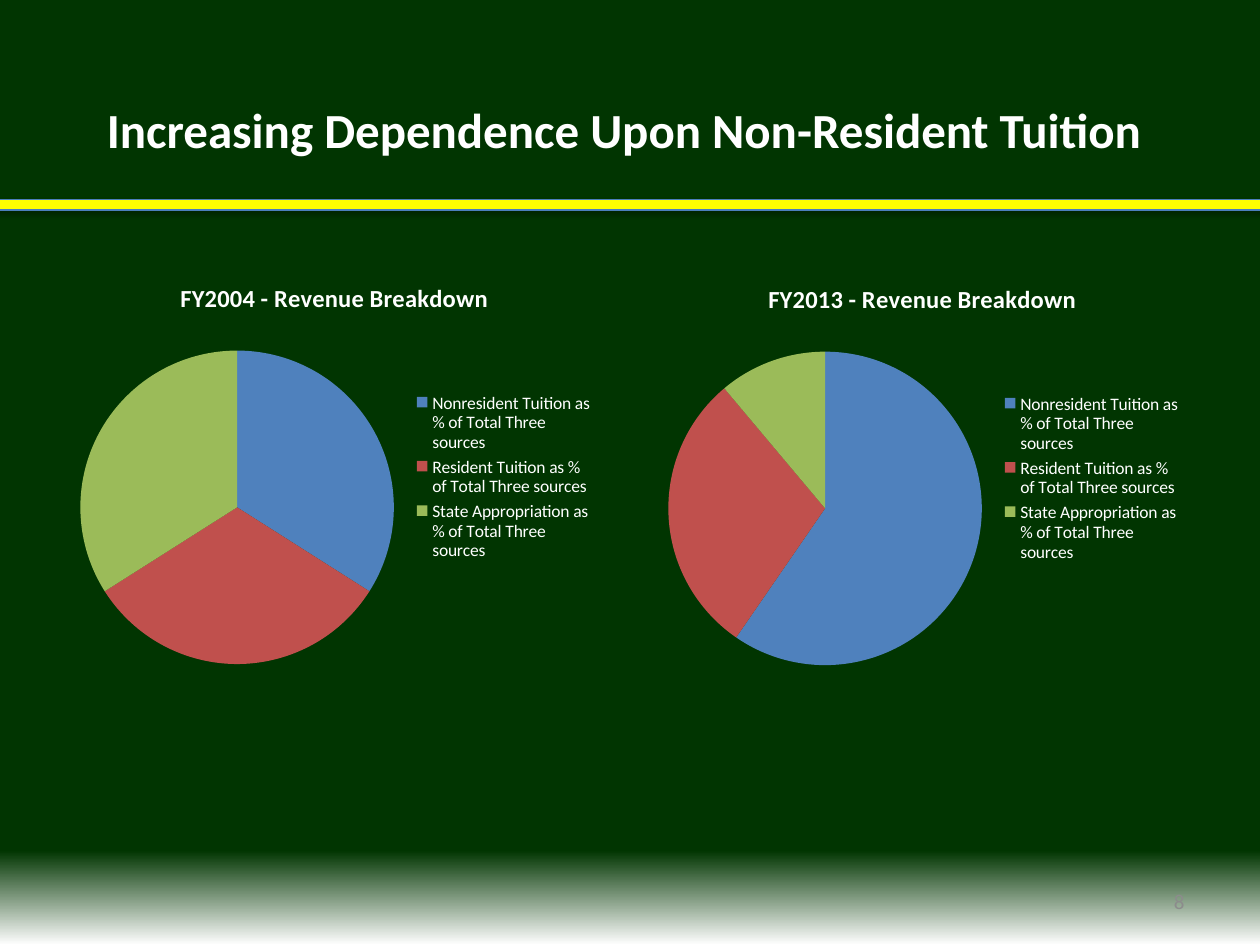
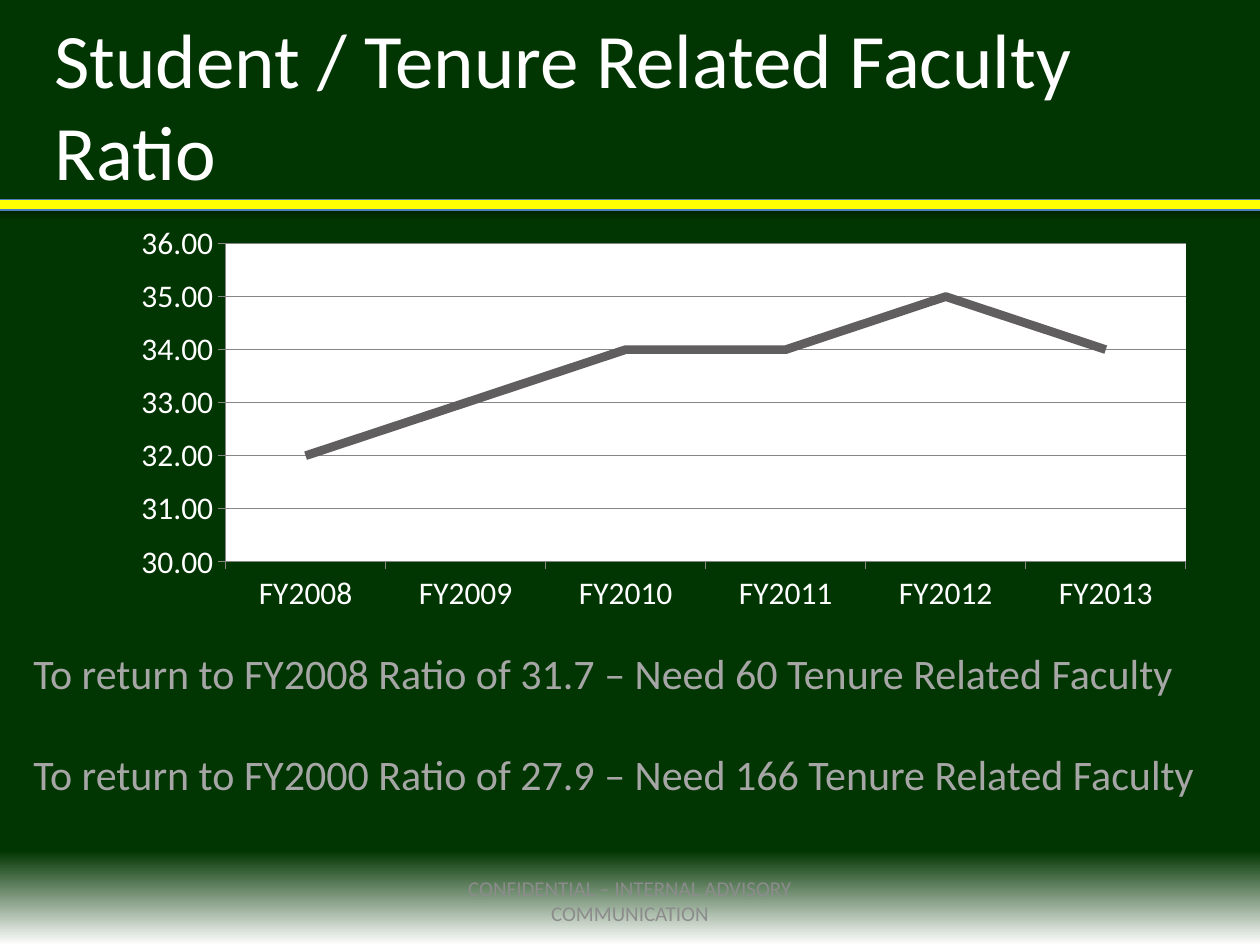
"""Build two slides on tuition revenue and the faculty ratio."""
from dataclasses import dataclass

from pptx import Presentation
from pptx.chart.chart import Chart
from pptx.chart.data import CategoryChartData
from pptx.dml.color import RGBColor
from pptx.enum.chart import XL_CHART_TYPE, XL_LEGEND_POSITION, XL_TICK_MARK
from pptx.enum.shapes import MSO_SHAPE
from pptx.enum.text import MSO_ANCHOR, PP_ALIGN
from pptx.oxml import parse_xml
from pptx.oxml.ns import nsdecls
from pptx.slide import Slide
from pptx.util import Pt

PIE, LINE = XL_CHART_TYPE.PIE, XL_CHART_TYPE.LINE
RIGHT = XL_LEGEND_POSITION.RIGHT
OUT = XL_TICK_MARK.OUTSIDE
RECT = MSO_SHAPE.RECTANGLE
TOP, MID = MSO_ANCHOR.TOP, MSO_ANCHOR.MIDDLE
START, CENTER, END = PP_ALIGN.LEFT, PP_ALIGN.CENTER, PP_ALIGN.RIGHT

FONT = "Calibri"
COLORS = {
    "green": "013501", "white": "FFFFFF", "yellow": "FFFF00", "edge": "4B7EBC",
    "muted": "8C8C8C", "note": "A6A6A6", "axis": "868686", "trend": "605E5E",
    "blue": "4F81BD", "red": "C0504D", "lime": "9BBB59",
}
WIDTH, HEIGHT = 720, 540
SOURCES = {
    "Nonresident Tuition as % of Total Three sources": "blue",
    "Resident Tuition as % of Total Three sources": "red",
    "State Appropriation as % of Total Three sources": "lime",
}
RATIOS = {
    "FY2008": 32, "FY2009": 33, "FY2010": 34,
    "FY2011": 34, "FY2012": 35, "FY2013": 34,
}


@dataclass(frozen=True)
class Box:
    x: float
    y: float
    w: float
    h: float

    def spans(self) -> tuple[Pt, Pt, Pt, Pt]:
        return Pt(self.x), Pt(self.y), Pt(self.w), Pt(self.h)


@dataclass(frozen=True)
class Label:
    box: Box
    lines: tuple[str, ...]
    size: float
    color: str
    bold: bool = False
    wrap: bool = True
    align: PP_ALIGN = START
    anchor: MSO_ANCHOR = TOP
    gap: float = 0


@dataclass(frozen=True)
class Pie:
    box: Box
    title: str
    shares: tuple[int, ...]


FOOT_Y, FOOT_H = 500.4, 28.8
HEAD = Label(Box(54, 53.6, 612, 41), ("Increasing Dependence Upon Non-Resident Tuition",),
             28, "white", bold=True, wrap=False)
PAGE = Label(Box(516, FOOT_Y, 168, FOOT_H), ("8",), 12, "muted", align=END, anchor=MID)
PIES = (
    Pie(Box(36, 149.2, 310.3, 247), "FY2004 - Revenue Breakdown", (34, 32, 34)),
    Pie(Box(372, 149.8, 310.3, 247), "FY2013 - Revenue Breakdown", (59, 29, 11)),
)
RATIO = Label(Box(24, 3, 648, 78), ("Student / Tenure Related Faculty Ratio",), 44, "white")
TREND, PLOT = Box(36, 126, 642, 228), Box(129, 139.2, 549, 181.9)
NEEDS = Label(
    Box(12, 366.5, 702, 128),
    ("To return to FY2008 Ratio of 31.7 – Need 60 Tenure Related Faculty",
     "To return to FY2000 Ratio of 27.9 – Need 166 Tenure Related Faculty"),
    24, "note", gap=29)
NOTICE = Label(Box(246, FOOT_Y, 228, FOOT_H),
               ("CONFIDENTIAL – INTERNAL ADVISORY COMMUNICATION",),
               12, "muted", align=CENTER, anchor=MID)


def rgb(name: str) -> RGBColor:
    return RGBColor.from_string(COLORS[name])


def style(font, size: float, color: str, bold: bool = False) -> None:
    font.name, font.size, font.bold = FONT, Pt(size), bold
    font.color.rgb = rgb(color)


def add_label(slide: Slide, label: Label) -> None:
    frame = slide.shapes.add_textbox(*label.box.spans()).text_frame
    frame.word_wrap = label.wrap
    frame.vertical_anchor = label.anchor
    for i, line in enumerate(label.lines):
        para = frame.add_paragraph() if i else frame.paragraphs[0]
        para.alignment = label.align
        para.space_before = Pt(label.gap if i else 0)
        run = para.add_run()
        run.text = line
        style(run.font, label.size, label.color, label.bold)


def add_band(slide: Slide) -> None:
    band = slide.shapes.add_shape(RECT, *Box(-6, 114, 732, 6).spans())
    band.fill.solid()
    band.fill.fore_color.rgb = rgb("yellow")
    band.line.color.rgb = rgb("edge")
    band.line.width = Pt(0.75)
    band.shadow.inherit = False
    band.element.spPr.effectLst.append(parse_xml(
        f'<a:outerShdw {nsdecls("a")} blurRad="{Pt(3.1)}" dist="{Pt(1.8)}" dir="5400000" '
        'rotWithShape="0"><a:srgbClr val="000000"><a:alpha val="35000"/></a:srgbClr>'
        '</a:outerShdw>'))


def add_base(deck) -> Slide:
    slide = deck.slides.add_slide(deck.slide_layouts[6])
    fill = slide.background.fill
    fill.gradient()
    fill.gradient_angle = 270
    for stop, (place, color) in zip(fill.gradient_stops, ((0.9, "green"), (1, "white"))):
        stop.position = place
        stop.color.rgb = rgb(color)
    add_band(slide)
    return slide


def add_chart(slide: Slide, kind: XL_CHART_TYPE, box: Box, cats, vals, size: float) -> Chart:
    data = CategoryChartData()
    data.categories = list(cats)
    data.add_series("Series 1", vals)
    chart = slide.shapes.add_chart(kind, *box.spans(), data).chart
    style(chart.font, size, "white")
    chart.has_legend = chart.has_title = False
    return chart


def add_pie(slide: Slide, pie: Pie) -> None:
    chart = add_chart(slide, PIE, pie.box, SOURCES, pie.shares, 10)
    chart.has_title = True
    run = chart.chart_title.text_frame.paragraphs[0].add_run()
    run.text = pie.title
    style(run.font, 14, "white", bold=True)
    chart.has_legend = True
    chart.legend.position = RIGHT
    chart.legend.include_in_layout = False
    style(chart.legend.font, 10, "white")
    plot = chart.plots[0]
    plot.vary_by_categories = True
    for i, color in enumerate(SOURCES.values()):
        fill = plot.series[0].points[i].format.fill
        fill.solid()
        fill.fore_color.rgb = rgb(color)


def set_plot(chart: Chart, box: Box, plot: Box) -> None:
    area = chart.element.chart.plotArea
    for old in area.xpath("c:layout"):
        area.remove(old)
    parts = "".join(f'<c:{tag} val="{val}"/>' for tag, val in (
        ("layoutTarget", "inner"), ("xMode", "edge"), ("yMode", "edge"),
        ("x", (plot.x - box.x) / box.w), ("y", (plot.y - box.y) / box.h),
        ("w", plot.w / box.w), ("h", plot.h / box.h)))
    area.insert(0, parse_xml(
        f'<c:layout {nsdecls("c")}><c:manualLayout>{parts}</c:manualLayout></c:layout>'))
    area.append(parse_xml(
        f'<c:spPr {nsdecls("c", "a")}><a:solidFill><a:srgbClr val="{COLORS["white"]}"/>'
        '</a:solidFill></c:spPr>'))


def add_trend(slide: Slide) -> None:
    chart = add_chart(slide, LINE, TREND, RATIOS, RATIOS.values(), 18)
    chart.plots[0].vary_by_categories = False
    series = chart.plots[0].series[0]
    series.smooth = False
    series.format.line.color.rgb = rgb("trend")
    series.format.line.width = Pt(5)
    scale = chart.value_axis
    scale.minimum_scale, scale.maximum_scale, scale.major_unit = 30, 36, 1
    scale.has_major_gridlines = True
    scale.tick_labels.number_format = "0.00"
    scale.tick_labels.number_format_is_linked = False
    for axis in (chart.category_axis, scale):
        axis.major_tick_mark = OUT
        style(axis.tick_labels.font, 18, "white")
    for part in (chart.category_axis, scale, scale.major_gridlines):
        part.format.line.color.rgb = rgb("axis")
        part.format.line.width = Pt(0.75)
    set_plot(chart, TREND, PLOT)


def main() -> None:
    deck = Presentation()
    deck.slide_width, deck.slide_height = Pt(WIDTH), Pt(HEIGHT)

    slide = add_base(deck)
    add_label(slide, PAGE)
    for pie in PIES:
        add_pie(slide, pie)
    add_label(slide, HEAD)

    slide = add_base(deck)
    add_label(slide, RATIO)
    add_trend(slide)
    for label in (NEEDS, NOTICE):
        add_label(slide, label)

    deck.save("out.pptx")


if __name__ == "__main__":
    main()
